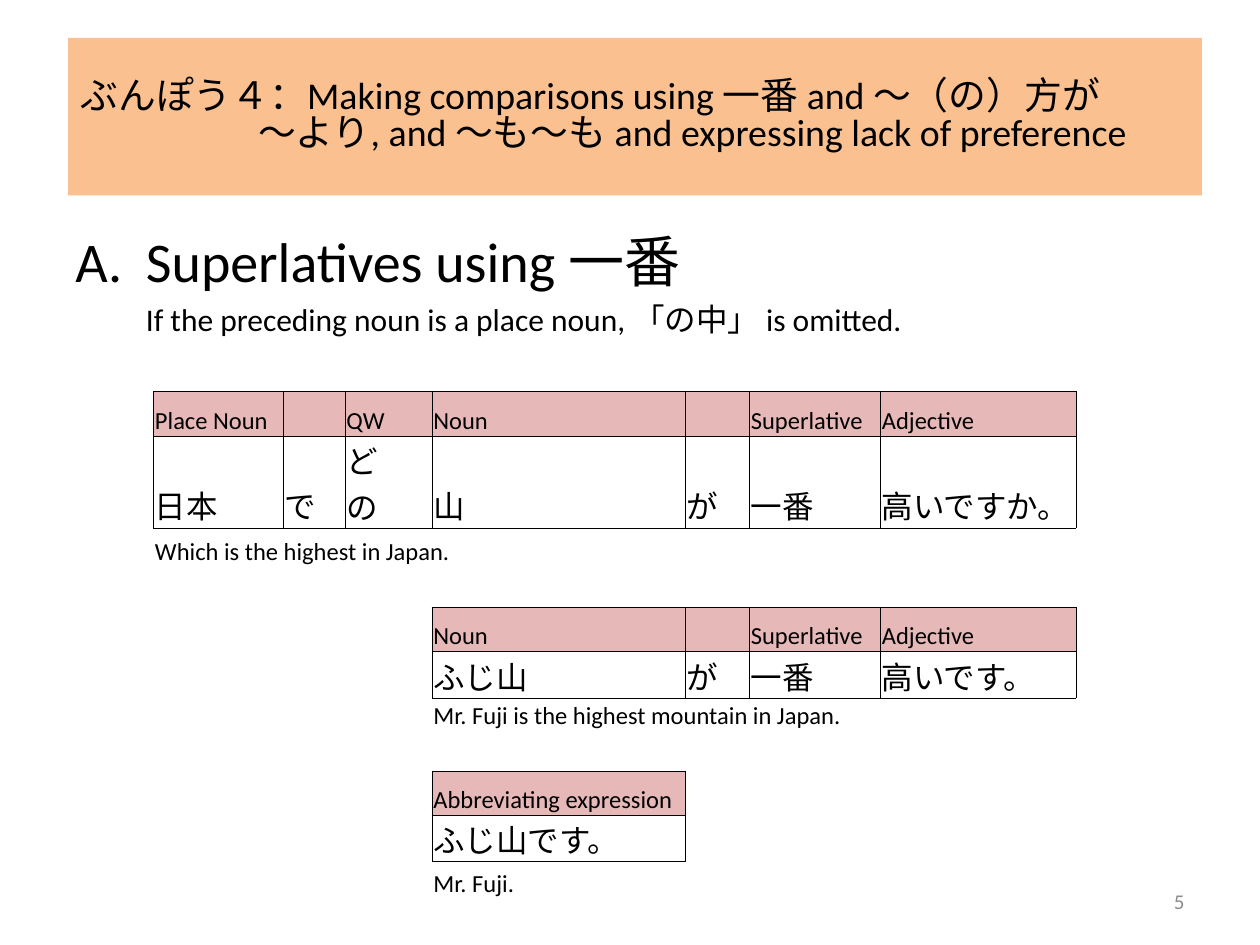
from lxml import etree
from pptx import Presentation
from pptx.dml.color import RGBColor
from pptx.enum.text import MSO_ANCHOR, PP_ALIGN
from pptx.oxml.ns import qn
from pptx.util import Inches, Pt

BLACK = RGBColor(0x00, 0x00, 0x00)
GRAY = RGBColor(0x8C, 0x8C, 0x8C)
ORANGE = RGBColor(0xFA, 0xC0, 0x90)
PINK = RGBColor(0xE6, 0xB9, 0xB8)
TOP, MIDDLE, BOTTOM = MSO_ANCHOR.TOP, MSO_ANCHOR.MIDDLE, MSO_ANCHOR.BOTTOM
LEFT, RIGHT = PP_ALIGN.LEFT, PP_ALIGN.RIGHT
PLAIN_STYLE = "{2D5ABB26-0587-4C30-8999-92F81FD0307C}"

COLUMNS = [1.03, 0.1, 0.39, 0.69, 2.01, 0.51, 0.34, 0.7, 1.55]
ROWS = [0.35, 0.73, 0.31, 0.32, 0.35, 0.37, 0.26, 0.32, 0.35, 0.37, 0.3]
PATTERNS = [
    (0, "Which is the highest in Japan.", [
        (0, "Place Noun", "日本"), (1, "", "で"), (3, "QW", "どの　"),
        (4, "Noun", "山"), (5, "", "が"), (6, "Superlative", "一番"),
        (8, "Adjective", "高いですか。")]),
    (4, "Mr. Fuji is the highest mountain in Japan.", [
        (4, "Noun", "ふじ山"), (5, "", "が"), (6, "Superlative", "一番"),
        (8, "Adjective", "高いです。")]),
    (8, "Mr. Fuji.", [(4, "Abbreviating expression", "ふじ山です。")]),
]
MERGES = (
    [(row, 1, 2) for row in (0, 1)]
    + [(2, 0, 4)]
    + [(row, 0, 1) for row in range(3, 11)]
    + [(row, 6, 7) for row in range(6)]
    + [(6, 4, 7)]
    + [(row, 5, 6) for row in range(7, 11)]
)


def write(para, text, size, color=BLACK, align=LEFT, before=0, spacing=1.0,
          margin=0, indent=0, numbering=None):
    para.alignment = align
    para.space_before = Pt(before)
    para.line_spacing = spacing
    para.font.size = Pt(size)
    properties = para._p.get_or_add_pPr()
    properties.set("marL", str(Inches(margin)))
    properties.set("indent", str(Inches(indent)))
    if numbering:
        bullet = etree.Element(qn("a:buAutoNum"), type=numbering)
        properties.find(qn("a:defRPr")).addprevious(bullet)
    para.text = text
    for span in para.runs:
        span.font.name = "Calibri"
        span.font.size = Pt(size)
        span.font.color.rgb = color


class SlideBuilder:
    """Holds the table style and the current slide."""

    def __init__(self, page, header_fill=PINK, border=BLACK, border_width=0.5):
        self.page = page
        self.header_fill = header_fill
        self.border = border
        self.border_width = border_width

    def text_box(self, left, top, width, height, anchor=TOP, fill=None):
        box = self.page.shapes.add_textbox(
            Inches(left), Inches(top), Inches(width), Inches(height))
        if fill is not None:
            box.fill.solid()
            box.fill.fore_color.rgb = fill
        box.text_frame.word_wrap = True
        box.text_frame.vertical_anchor = anchor
        return box.text_frame

    def table(self, left, top, columns, rows):
        frame = self.page.shapes.add_table(
            len(rows), len(columns), Inches(left), Inches(top),
            Inches(sum(columns)), Inches(sum(rows)))
        table = frame.table
        table.first_row = table.horz_banding = False
        table._tbl.tblPr.find(qn("a:tableStyleId")).text = PLAIN_STYLE
        for column, width in zip(table.columns, columns):
            column.width = Inches(width)
        for row, height in zip(table.rows, rows):
            row.height = Inches(height)
        for cell in table.iter_cells():
            cell.margin_left = cell.margin_right = cell.margin_top = Inches(0.01)
            cell.margin_bottom = 0
            cell.vertical_anchor = BOTTOM
            cell.fill.background()
            write(cell.text_frame.paragraphs[0], "", 14)
        return table

    def cell(self, cell, text, size, fill=None, bordered=True):
        write(cell.text_frame.paragraphs[0], text, size)
        if fill is not None:
            cell.fill.solid()
            cell.fill.fore_color.rgb = fill
        if bordered:
            properties = cell._tc.get_or_add_tcPr()
            for position, side in enumerate("LRTB"):
                line = etree.Element(qn(f"a:ln{side}"), w=str(Pt(self.border_width)))
                solid = etree.SubElement(line, qn("a:solidFill"))
                etree.SubElement(solid, qn("a:srgbClr"), val=str(self.border))
                properties.insert(position, line)

    def pattern(self, table, row, caption, fields):
        for column, heading, example in fields:
            self.cell(table.cell(row, column), heading, 14, self.header_fill)
            self.cell(table.cell(row + 1, column), example, 18)
        self.cell(table.cell(row + 2, fields[0][0]), caption, 14, bordered=False)


def main():
    deck = Presentation()
    deck.slide_width, deck.slide_height = Inches(10), Inches(7.5)
    page = deck.slides.add_slide(deck.slide_layouts[6])
    builder = SlideBuilder(page)

    body = builder.text_box(0.5, 1.75, 9, 4.95)
    write(body.paragraphs[0], "Superlatives using 一番", 32, before=6.4,
          margin=0.56, indent=-0.56, numbering="alphaUcPeriod")
    write(body.add_paragraph(),
          "If the preceding noun is a place noun, 「の中」 is omitted.", 18,
          before=3.6, margin=0.56)

    number = builder.text_box(7.17, 6.95, 2.33, 0.4, MIDDLE)
    write(number.paragraphs[0], "5", 12, GRAY, RIGHT)

    title = builder.text_box(0.54, 0.3, 9, 1.25, MIDDLE, ORANGE)
    write(title.paragraphs[0],
          "ぶんぽう４：Making comparisons using 一番 and ～（の）方が\v"
          "～より, and ～も～も and expressing lack of preference",
          21.6, spacing=0.82, margin=1.41, indent=-1.41)

    table = builder.table(1.22, 3.11, COLUMNS, ROWS)
    for row, first, last in MERGES:
        table.cell(row, first).merge(table.cell(row, last))
    for row, caption, fields in PATTERNS:
        builder.pattern(table, row, caption, fields)

    deck.save("out.pptx")


if __name__ == "__main__":
    main()
